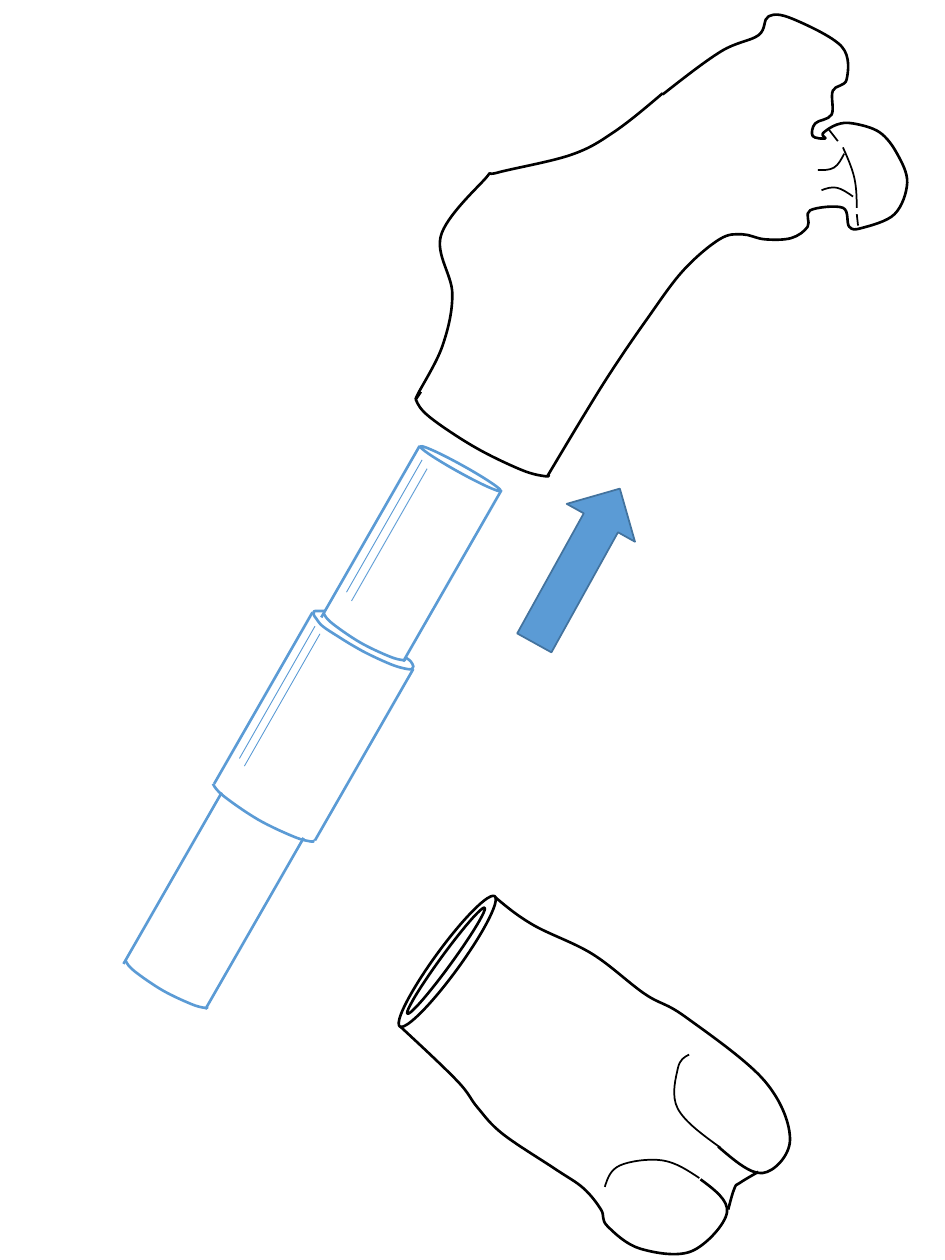
import dataclasses

import lxml.etree
import pptx
import pptx.dml.color
import pptx.enum.shapes
import pptx.oxml.ns
import pptx.util

Inches = pptx.util.Inches
qn = pptx.oxml.ns.qn
SHAPE = pptx.enum.shapes.MSO_SHAPE
STRAIGHT = pptx.enum.shapes.MSO_CONNECTOR.STRAIGHT


@dataclasses.dataclass(frozen=True)
class Theme:
    """Colours and line weights of the drawing."""
    bone: str = "000000"
    implant: str = "5B9BD5"
    arrow_edge: str = "43739E"
    outline: float = 1.5
    detail: float = 1
    highlight: float = 0.5


@dataclasses.dataclass(frozen=True)
class Box:
    """Area of the slide, in inches."""
    left: float
    top: float
    width: float
    height: float

    def place(self, x, y):
        """Turn a point within the box into slide lengths."""
        return Inches(self.left + x), Inches(self.top + y)


THEME = Theme()


def rgb(colour):
    """Return a colour object for a hex value."""
    return pptx.dml.color.RGBColor.from_string(colour)


def set_line(part, colour, weight):
    """Set the colour and weight of a part's line."""
    part.line.color.rgb = rgb(colour)
    part.line.width = pptx.util.Pt(weight)


def smooth(curve):
    """Turn the straight segments of an outline into one flowing curve."""
    outline = next(curve._element.iter(qn("a:path")))
    knots = [(int(point.get("x")), int(point.get("y")))
             for point in outline.iter(qn("a:pt"))]
    padded = [knots[0], *knots, knots[-1]]
    segments = outline.findall(qn("a:lnTo"))
    for i, segment in enumerate(segments):
        before, start, end, after = padded[i:i + 4]
        leave = [s + (e - b) / 6 for b, s, e in zip(before, start, end)]
        arrive = [e - (a - s) / 6 for s, e, a in zip(start, end, after)]
        if i == 0:
            leave = [(s + c) / 2 for s, c in zip(start, arrive)]
        if i == len(segments) - 1:
            arrive = [(e + c) / 2 for e, c in zip(end, leave)]
        bend = lxml.etree.SubElement(outline, qn("a:cubicBezTo"))
        for x, y in (leave, arrive, end):
            lxml.etree.SubElement(
                bend, qn("a:pt"), x=str(round(x)), y=str(round(y)))
        outline.remove(segment)


def draw_curve(shapes, box, knots, colour, weight):
    """Draw an open, unfilled curve through the knots."""
    first, *rest = [box.place(*knot) for knot in knots]
    builder = shapes.build_freeform(*first)
    builder.add_line_segments(rest, close=False)
    curve = builder.convert_to_shape()
    smooth(curve)
    curve.shadow.inherit = False
    curve.fill.background()
    set_line(curve, colour, weight)


def draw_ellipse(shapes, box, frame, rotation, colour):
    """Draw a rotated, unfilled ellipse."""
    x, y, width, height = frame
    ellipse = shapes.add_shape(
        SHAPE.OVAL, *box.place(x, y), Inches(width), Inches(height))
    ellipse.rotation = rotation
    ellipse.shadow.inherit = False
    ellipse.fill.background()
    set_line(ellipse, colour, THEME.outline)


def draw_straight(shapes, box, start, run, colour, weight):
    """Draw a straight line from a start point along a run."""
    end = [s + r for s, r in zip(start, run)]
    line = shapes.add_connector(STRAIGHT, *box.place(*start), *box.place(*end))
    set_line(line, colour, weight)
    lxml.etree.SubElement(line._element.spPr, qn("a:effectLst"))


def draw_upper_bone(slide, box):
    """Draw the upper bone with its head, neck and cut end."""
    shapes = slide.shapes.add_group_shape().shapes
    head_side = [
        (2.26, 0.75), (2.72, 0.41), (3.02, 0.28), (3.1, 0.13), (3.29, 0.15),
        (3.68, 0.37), (3.72, 0.63), (3.61, 0.72), (3.6, 0.91), (3.47, 0.98),
        (3.45, 1.08), (3.55, 1.1), (3.53, 1.06), (3.64, 0.99), (3.77, 0.98),
        (3.98, 1.05), (4.12, 1.22), (4.2, 1.45), (4.1, 1.7), (3.84, 1.81),
        (3.74, 1.8), (3.69, 1.65), (3.43, 1.67), (3.41, 1.8), (3.28, 1.89),
        (3.07, 1.9), (2.89, 1.86), (2.71, 1.9), (2.42, 2.15), (2.13, 2.54),
        (1.85, 2.95), (1.62, 3.32), (1.35, 3.77)]
    outer_side = [
        (2.26, 0.74), (1.87, 1.05), (1.53, 1.23), (0.95, 1.37), (0.85, 1.42),
        (0.5, 1.87), (0.59, 2.33), (0.51, 2.75), (0.31, 3.14), (0.34, 3.11)]
    cut_end = [(0.3, 3.17), (0.41, 3.31), (0.77, 3.55), (1.14, 3.73),
               (1.33, 3.78), (1.35, 3.76)]
    head_rim = [(3.69, 1.17), (3.78, 1.41), (3.8, 1.65)]
    neck_top = [(3.7, 1.22), (3.62, 1.33), (3.49, 1.35)]
    neck_base = [(3.77, 1.56), (3.64, 1.49), (3.52, 1.51)]
    rim_start = [(3.58, 1.03), (3.65, 1.12)]
    rim_end = [(3.8, 1.7), (3.81, 1.79)]
    for knots in (head_side, outer_side, cut_end):
        draw_curve(shapes, box, knots, THEME.bone, THEME.outline)
    for knots in (head_rim, neck_top, neck_base, rim_start, rim_end):
        draw_curve(shapes, box, knots, THEME.bone, THEME.detail)


def draw_implant(slide, box):
    """Draw the stepped implant with its stems and collar."""
    shapes = slide.shapes.add_group_shape().shapes
    draw_ellipse(shapes, box, (2.79, 0.69, 0.73, 0.06), 29, THEME.implant)
    rim = [(0, 0), (0.07, 0.08), (0.29, 0.23), (0.52, 0.34), (0.63, 0.37),
           (0.64, 0.36)]
    for x, y, scale in ((0.5, 4.63, 1), (1.19, 3.22, 1.24), (2.07, 1.87, 1)):
        knots = [(x + scale * dx, y + scale * dy) for dx, dy in rim]
        draw_curve(shapes, box, knots, THEME.implant, THEME.outline)
    collar_top = [
        (2.08, 1.85), (2, 1.85), (1.99, 1.86), (1.99, 1.88), (2.01, 1.91),
        (2.06, 1.97), (2.18, 2.05), (2.31, 2.13), (2.44, 2.2), (2.62, 2.28),
        (2.73, 2.31), (2.77, 2.31), (2.78, 2.29), (2.76, 2.25), (2.72, 2.22)]
    draw_curve(shapes, box, collar_top, THEME.implant, THEME.outline)
    walls = [(2.83, 0.54), (1.26, 3.29), (3.48, 0.89), (1.91, 3.65),
             (1.98, 1.86), (2.78, 2.31)]
    highlights = [(2, 1.97), (2.04, 2.03), (2.85, 0.65), (2.89, 0.72)]
    for starts, run, weight in ((walls, (-0.78, 1.36), THEME.outline),
                                (highlights, (-0.6, 1.05), THEME.highlight)):
        for start in starts:
            draw_straight(shapes, box, start, run, THEME.implant, weight)


def draw_direction(slide, box):
    """Draw the arrow that shows where the implant goes."""
    arrow = slide.shapes.add_shape(
        SHAPE.DOWN_ARROW, *box.place(0, 0), Inches(box.width), Inches(box.height))
    arrow.rotation = 209
    arrow.shadow.inherit = False
    arrow.fill.solid()
    arrow.fill.fore_color.rgb = rgb(THEME.implant)
    set_line(arrow, THEME.arrow_edge, THEME.detail)


def draw_lower_bone(slide, box):
    """Draw the lower bone with its two condyles and hollow end."""
    shapes = slide.shapes.add_group_shape().shapes
    left_side = [
        (0.18, 1.15), (0.63, 1.58), (0.79, 1.79), (0.99, 2), (1.41, 2.28),
        (1.63, 2.43), (1.77, 2.6), (1.82, 2.73), (2.08, 2.91), (2.49, 2.93),
        (2.77, 2.62), (2.56, 2.36)]
    right_side = [
        (2.7, 2.1), (3.05, 2.31), (3.27, 2.05), (3.07, 1.58), (2.44, 1.07),
        (2.12, 0.89), (1.7, 0.57), (1.23, 0.34), (0.93, 0.12)]
    notch = [(2.78, 2.6), (2.83, 2.43), (2.87, 2.39), (3.02, 2.3)]
    left_condyle = [(2.55, 2.35), (2.26, 2.21), (1.92, 2.25), (1.8, 2.42)]
    right_condyle = [(2.72, 2.11), (2.38, 1.8), (2.38, 1.48), (2.47, 1.37)]
    for knots in (left_side, right_side, notch):
        draw_curve(shapes, box, knots, THEME.bone, THEME.outline)
    for knots in (left_condyle, right_condyle):
        draw_curve(shapes, box, knots, THEME.bone, THEME.detail)
    for frame in ((-0.09, 0.53, 1.28, 0.2), (0.02, 0.58, 1.04, 0.09)):
        draw_ellipse(shapes, box, frame, 306.1, THEME.bone)


def main():
    """Build the slide and save it."""
    deck = pptx.Presentation()
    deck.slide_width, deck.slide_height = Inches(7.5), Inches(10)
    slide = deck.slides.add_slide(deck.slide_layouts[6])
    draw_upper_bone(slide, Box(3, 0, 4.5, 4))
    draw_implant(slide, Box(0.5, 3, 4, 5.5))
    draw_direction(slide, Box(4.27, 3.79, 0.62, 1.4))
    draw_lower_bone(slide, Box(3, 7, 3.5, 3))
    deck.save("out.pptx")


if __name__ == "__main__":
    main()
